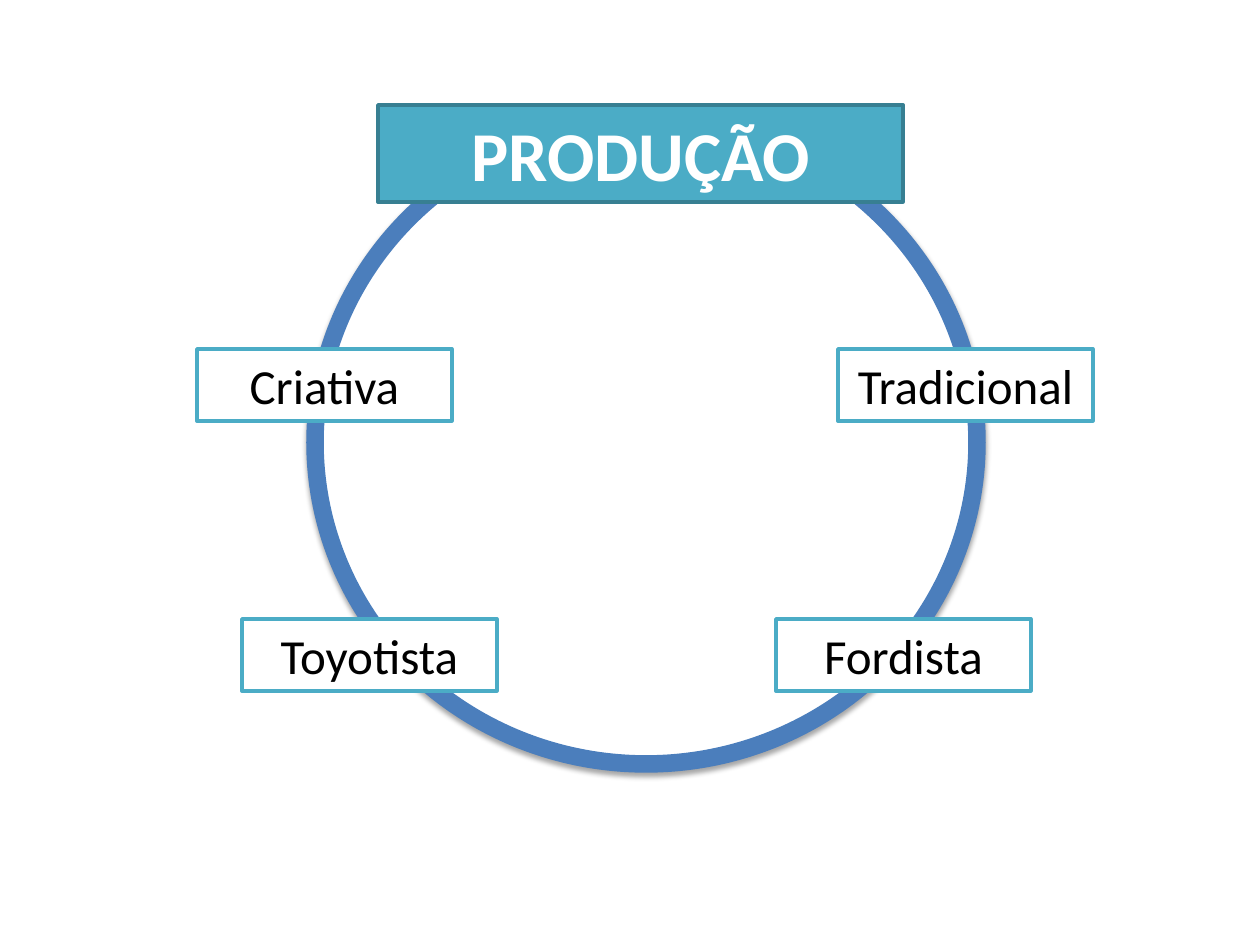
from dataclasses import dataclass

from lxml import etree
from pptx import Presentation
from pptx.dml.color import RGBColor
from pptx.enum import shapes, text
from pptx.oxml.ns import qn
from pptx.util import Emu, Pt

PX = 914400 / 126  # EMU per px


@dataclass(frozen=True)
class Theme:
    font: str = "Calibri"
    white: str = "FFFFFF"
    black: str = "000000"
    ring: str = "4B7EBC"
    teal: str = "4BACC6"
    dark_teal: str = "377F92"
    title_size: int = 40
    label_size: int = 28
    ring_width: int = 10
    border_width: int = 2


T = Theme()


def px(n):
    return Emu(round(n * PX))


def add_shape(slide, kind, box, fill, line, width):
    sp = slide.shapes.add_shape(kind, *map(px, box))
    sp.shadow.inherit = False
    sp.fill.solid()
    sp.fill.fore_color.rgb = RGBColor.from_string(fill)
    sp.line.color.rgb = RGBColor.from_string(line)
    sp.line.width = Pt(width)
    return sp


def write(sp, content, size, color, bold=False):
    tf = sp.text_frame
    tf.word_wrap = True
    tf.auto_size = text.MSO_AUTO_SIZE.SHAPE_TO_FIT_TEXT
    tf.vertical_anchor = text.MSO_ANCHOR.TOP
    p = tf.paragraphs[0]
    p.alignment = text.PP_ALIGN.CENTER
    r = p.add_run()
    r.text = content
    r.font.name = T.font
    r.font.size = Pt(size)
    r.font.bold = bold
    r.font.color.rgb = RGBColor.from_string(color)


def add_shadow(sp, color, alpha, blur, dist):
    effects = sp.element.spPr.find(qn("a:effectLst"))
    shadow = etree.SubElement(
        effects, qn("a:outerShdw"), blurRad=str(Pt(blur)), dist=str(Pt(dist)),
        dir="5400000", rotWithShape="0")
    clr = etree.SubElement(shadow, qn("a:srgbClr"), val=color)
    etree.SubElement(clr, qn("a:alpha"), val=str(alpha * 1000))


def add_ring(slide, box):
    sp = add_shape(slide, shapes.MSO_SHAPE.OVAL, box, T.white, T.ring, T.ring_width)
    add_shadow(sp, T.black, alpha=35, blur=3.1, dist=1.8)


def add_title(slide, box):
    sp = add_shape(slide, shapes.MSO_SHAPE.RECTANGLE, box,
                   T.teal, T.dark_teal, T.border_width)
    write(sp, "PRODUÇÃO", size=T.title_size, color=T.white, bold=True)


def add_labels(slide, box):
    left, top, _, _ = box
    w, h, row_gap = 255, 72, 270
    # Each row: right label and its offset, left label and its offset
    rows = [
        [("Tradicional", 641), ("Criativa", 0)],
        [("Fordista", 579), ("Toyotista", 45)],
    ]
    for i, row in enumerate(rows):
        for name, dx in row:
            sp = add_shape(slide, shapes.MSO_SHAPE.RECTANGLE,
                           (left + dx, top + i * row_gap, w, h),
                           T.white, T.teal, T.border_width)
            write(sp, name, size=T.label_size, color=T.black)


def main():
    prs = Presentation()
    prs.slide_width, prs.slide_height = px(1260), px(945)
    slide = prs.slides.add_slide(prs.slide_layouts[6])

    # Ring behind, then the title and the four labels on it
    add_ring(slide, (315, 121, 662, 643))
    add_title(slide, (378, 105, 525, 97))
    add_labels(slide, (197, 349, 896, 342))

    prs.save("out.pptx")


if __name__ == "__main__":
    main()
